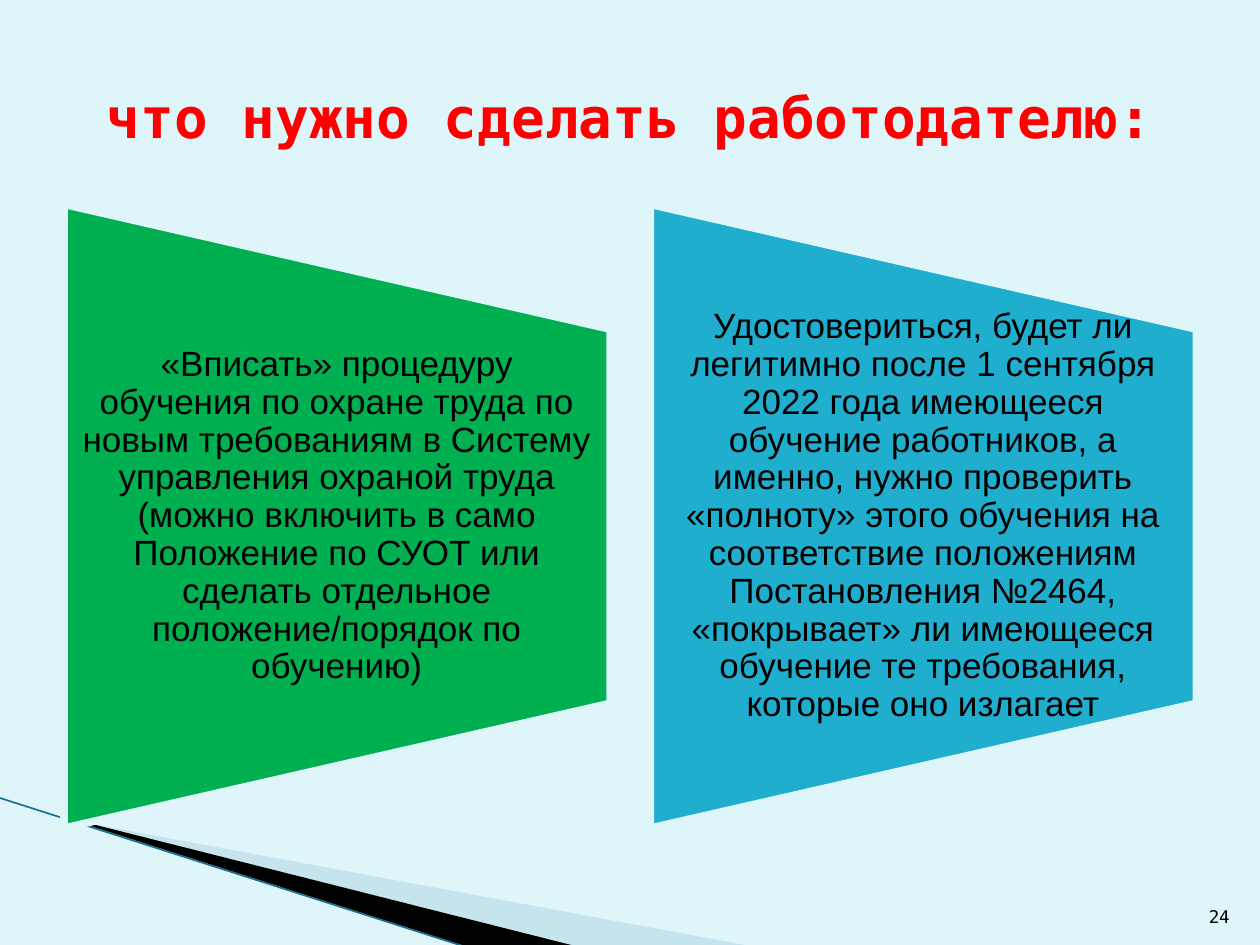
from lxml.etree import SubElement
from pptx import Presentation
from pptx.dml.color import RGBColor
from pptx.enum.shapes import MSO_CONNECTOR, MSO_SHAPE
from pptx.enum.text import MSO_ANCHOR as ANCHOR, PP_ALIGN as ALIGN
from pptx.oxml.ns import qn
from pptx.util import Pt

BACKGROUND = "DEF5FA"
MONO = "DejaVu Sans Mono"
PANEL_STEP = 335
PANELS = [
    ("00B050", "«Вписать» процедуру обучения по охране труда по новым требованиям "
     "в Систему управления охраной труда (можно включить в само Положение по СУОТ "
     "или сделать отдельное положение/порядок по обучению)"),
    ("1FAECD", "Удостовериться, будет ли легитимно после 1 сентября 2022 года имеющееся "
     "обучение работников, а именно, нужно проверить «полноту» этого обучения на "
     "соответствие положениям Постановления №2464, «покрывает» ли имеющееся обучение "
     "те требования, которые оно излагает"),
]


def paint(fill, color):
    """Make a fill solid in a hex colour."""
    fill.solid()
    fill.fore_color.rgb = RGBColor.from_string(color)


def write(s, text, size, font, color="000000", align=ALIGN.CENTER,
          anchor=ANCHOR.MIDDLE, bold=False):
    """Put one formatted paragraph into a shape and return it."""
    tf = s.text_frame
    tf.text = text
    tf.word_wrap = True
    tf.vertical_anchor = anchor
    p = tf.paragraphs[0]
    p.alignment = align
    f = p.runs[0].font
    f.size, f.name, f.bold = Pt(size), font, bold
    f.color.rgb = RGBColor.from_string(color)
    return p


def add_wedge(slide, points, color, opacity=100):
    """Draw a filled polygon through points."""
    points = [(Pt(x), Pt(y)) for x, y in points]
    builder = slide.shapes.build_freeform(*points[0])
    builder.add_line_segments(points[1:])
    s = builder.convert_to_shape()
    s.shadow.inherit = False
    paint(s.fill, color)
    s.line.fill.background()
    if opacity < 100:
        clr = s._element.spPr.find(qn("a:solidFill"))[0]
        SubElement(clr, qn("a:alpha"), val=str(opacity * 1000))


def add_ray(slide, x1, y1, x2, y2, color):
    """Draw a thin straight line."""
    s = slide.shapes.add_connector(
        MSO_CONNECTOR.STRAIGHT, Pt(x1), Pt(y1), Pt(x2), Pt(y2))
    paint(s.line.fill, color)
    s.line.width = Pt(0.95)
    SubElement(s._element.spPr, qn("a:effectLst"))


def add_panel(slide, offset, color, text):
    """Draw a sideways trapezoid with upright text over it."""
    s = slide.shapes.add_shape(MSO_SHAPE.FLOWCHART_MANUAL_OPERATION,
                               Pt(14.4 + offset), Pt(139), Pt(356.4), Pt(312))
    s.rotation = 270
    s.shadow.inherit = False
    paint(s.fill, color)
    paint(s.line.fill, BACKGROUND)
    s.line.width = Pt(4.33)
    box = slide.shapes.add_textbox(Pt(36.4 + offset), Pt(188), Pt(312), Pt(214))
    tf = box.text_frame
    tf.margin_left = tf.margin_right = Pt(10)
    tf.margin_top = tf.margin_bottom = 0
    write(box, text, 20, "Arial").line_spacing = 0.9


def main():
    """Build the slide and save it."""
    prs = Presentation()
    prs.slide_width, prs.slide_height = Pt(720), Pt(540)
    slide = prs.slides.add_slide(prs.slide_layouts[5])
    paint(slide.background.fill, BACKGROUND)

    add_wedge(slide, [(39.6, 468.5), (428.4, 540.5), (328, 540.5), (39.6, 468)],
              "A0CBDC", 40)
    add_wedge(slide, [(38.2, 467.3), (329, 540.7), (268, 541.4), (39, 468)], "000000")
    add_ray(slide, -0.7, 455.8, 267, 541.4, "1B6F8F")

    title = slide.shapes.title
    title.left, title.top, title.width, title.height = Pt(36), Pt(21.6), Pt(648), Pt(90)
    write(title, "что нужно сделать работодателю:", 32, MONO, "FF0000", bold=True)

    for i, (color, text) in enumerate(PANELS):
        add_panel(slide, i * PANEL_STEP, color, text)

    number = slide.shapes.add_textbox(Pt(681), Pt(504.7), Pt(28.8), Pt(28.8))
    write(number, "24", 10, MONO, align=ALIGN.RIGHT, anchor=ANCHOR.BOTTOM)
    prs.save("out.pptx")


if __name__ == "__main__":
    main()
